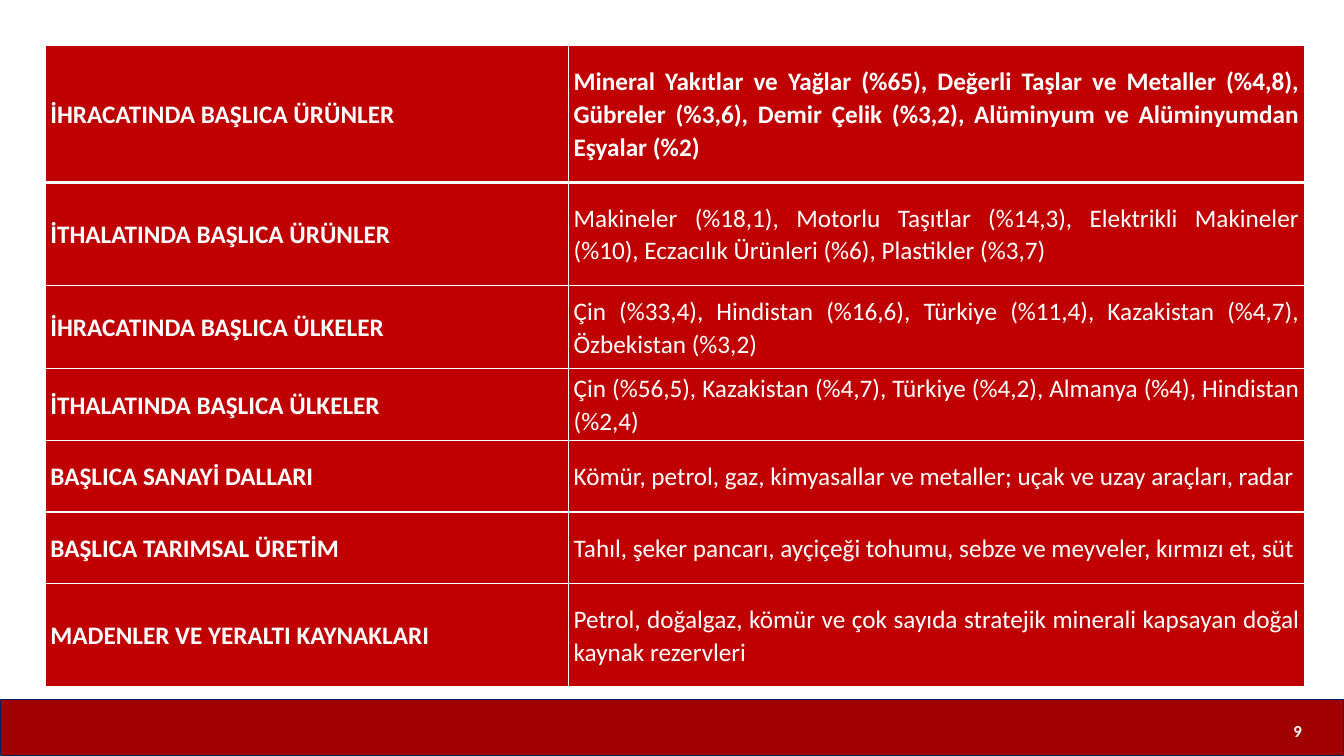
from dataclasses import dataclass

from lxml.etree import SubElement
from pptx import Presentation
from pptx.dml.color import RGBColor
from pptx.enum.shapes import MSO_SHAPE
from pptx.enum.text import MSO_ANCHOR, PP_ALIGN
from pptx.oxml.ns import qn
from pptx.util import Inches, Pt


@dataclass(frozen=True)
class Theme:
    """Colours, font and type sizes of the slide."""
    font: str = "Calibri"
    white: str = "FFFFFF"
    cell: str = "C00000"
    footer: str = "A00000"
    footer_line: str = "002060"
    body_size: int = 18
    number_size: int = 12


THEME = Theme()
COLUMN_WIDTHS = (5.19, 7.3)
ROWS = (
    (1.36, "İHRACATINDA BAŞLICA ÜRÜNLER",
     "Mineral Yakıtlar ve Yağlar (%65), Değerli Taşlar ve Metaller (%4,8), "
     "Gübreler (%3,6), Demir Çelik (%3,2), Alüminyum ve Alüminyumdan Eşyalar (%2)"),
    (1.02, "İTHALATINDA BAŞLICA ÜRÜNLER",
     "Makineler (%18,1), Motorlu Taşıtlar (%14,3), Elektrikli Makineler (%10), "
     "Eczacılık Ürünleri (%6), Plastikler (%3,7)"),
    (0.83, "İHRACATINDA BAŞLICA ÜLKELER",
     "Çin (%33,4), Hindistan (%16,6), Türkiye (%11,4), Kazakistan (%4,7), Özbekistan (%3,2)"),
    (0.71, "İTHALATINDA BAŞLICA ÜLKELER",
     "Çin (%56,5), Kazakistan (%4,7), Türkiye (%4,2), Almanya (%4), Hindistan (%2,4)"),
    (0.71, "BAŞLICA SANAYİ DALLARI",
     "Kömür, petrol, gaz, kimyasallar ve metaller; uçak ve uzay araçları, radar"),
    (0.71, "BAŞLICA TARIMSAL ÜRETİM",
     "Tahıl, şeker pancarı, ayçiçeği tohumu, sebze ve meyveler, kırmızı et, süt"),
    (1.02, "MADENLER VE YERALTI KAYNAKLARI",
     "Petrol, doğalgaz, kömür ve çok sayıda stratejik minerali kapsayan doğal kaynak rezervleri"),
)


def write_text(text_frame, text, size, bold=False, align=PP_ALIGN.LEFT,
               line_spacing=None, space_after=None):
    """Write one formatted paragraph into a text frame."""
    paragraph = text_frame.paragraphs[0]
    paragraph.alignment = align
    paragraph.line_spacing = line_spacing
    paragraph.space_after = space_after
    run = paragraph.add_run()
    run.text = text
    run.font.name = THEME.font
    run.font.size = Pt(size)
    run.font.bold = bold
    run.font.color.rgb = RGBColor.from_string(THEME.white)


def add_plain_shape(slide, kind, left, top, width, height, fill=None, line=None):
    """Add a preset shape without shadow, with optional fill and outline."""
    shape = slide.shapes.add_shape(
        kind, Inches(left), Inches(top), Inches(width), Inches(height))
    shape.shadow.inherit = False
    if fill:
        shape.fill.solid()
        shape.fill.fore_color.rgb = RGBColor.from_string(fill)
    else:
        shape.fill.background()
    if line:
        shape.line.color.rgb = RGBColor.from_string(line)
        shape.line.width = Pt(1)
    else:
        shape.line.fill.background()
    return shape


def set_borders(cell, **widths):
    """Draw white cell borders with the given widths in points."""
    properties = cell._tc.get_or_add_tcPr()
    for side, width in widths.items():
        border = SubElement(properties, qn(f"a:ln{side}"), w=str(Pt(width)))
        fill = SubElement(border, qn("a:solidFill"))
        SubElement(fill, qn("a:srgbClr"), val=THEME.white)


def format_cell(cell, text, bold, align, top, bottom):
    """Fill one table cell with its text, borders and colour."""
    set_borders(cell, L=1, R=1, T=top, B=bottom)
    cell.fill.solid()
    cell.fill.fore_color.rgb = RGBColor.from_string(THEME.cell)
    cell.vertical_anchor = MSO_ANCHOR.MIDDLE
    cell.margin_left = cell.margin_right = Inches(0.05)
    cell.margin_top = cell.margin_bottom = 0
    write_text(cell.text_frame, text, THEME.body_size, bold=bold, align=align,
               line_spacing=1.07, space_after=Pt(8))


def add_trade_table(slide):
    """Add the table of trade, industry and resources."""
    table = slide.shapes.add_table(
        len(ROWS), len(COLUMN_WIDTHS), Inches(0.45), Inches(0.45),
        Inches(sum(COLUMN_WIDTHS)), Inches(sum(row[0] for row in ROWS))).table
    for column, width in zip(table.columns, COLUMN_WIDTHS):
        column.width = Inches(width)
    for index, (height, heading, details) in enumerate(ROWS):
        table.rows[index].height = Inches(height)
        top = 3 if index == 1 else 1
        bottom = 3 if index == 0 else 1
        format_cell(table.cell(index, 0), heading, True, PP_ALIGN.LEFT, top, bottom)
        format_cell(table.cell(index, 1), details, index == 0, PP_ALIGN.JUSTIFY, top, bottom)


def add_footer(slide, number):
    """Add the bottom band and the slide number."""
    add_plain_shape(slide, MSO_SHAPE.RECTANGLE, 0, 6.94, 13.33, 0.56,
                    fill=THEME.footer, line=THEME.footer_line)
    number_shape = add_plain_shape(
        slide, MSO_SHAPE.ROUND_2_SAME_RECTANGLE, 12.63, 6.94, 0.48, 0.59)
    number_shape.text_frame.vertical_anchor = MSO_ANCHOR.MIDDLE
    write_text(number_shape.text_frame, number, THEME.number_size,
               bold=True, align=PP_ALIGN.CENTER)


def main():
    """Build and save the presentation."""
    presentation = Presentation()
    presentation.slide_width = Inches(13.33)
    presentation.slide_height = Inches(7.5)
    slide = presentation.slides.add_slide(presentation.slide_layouts[6])
    add_footer(slide, "9")
    add_trade_table(slide)
    presentation.save("out.pptx")


if __name__ == "__main__":
    main()
